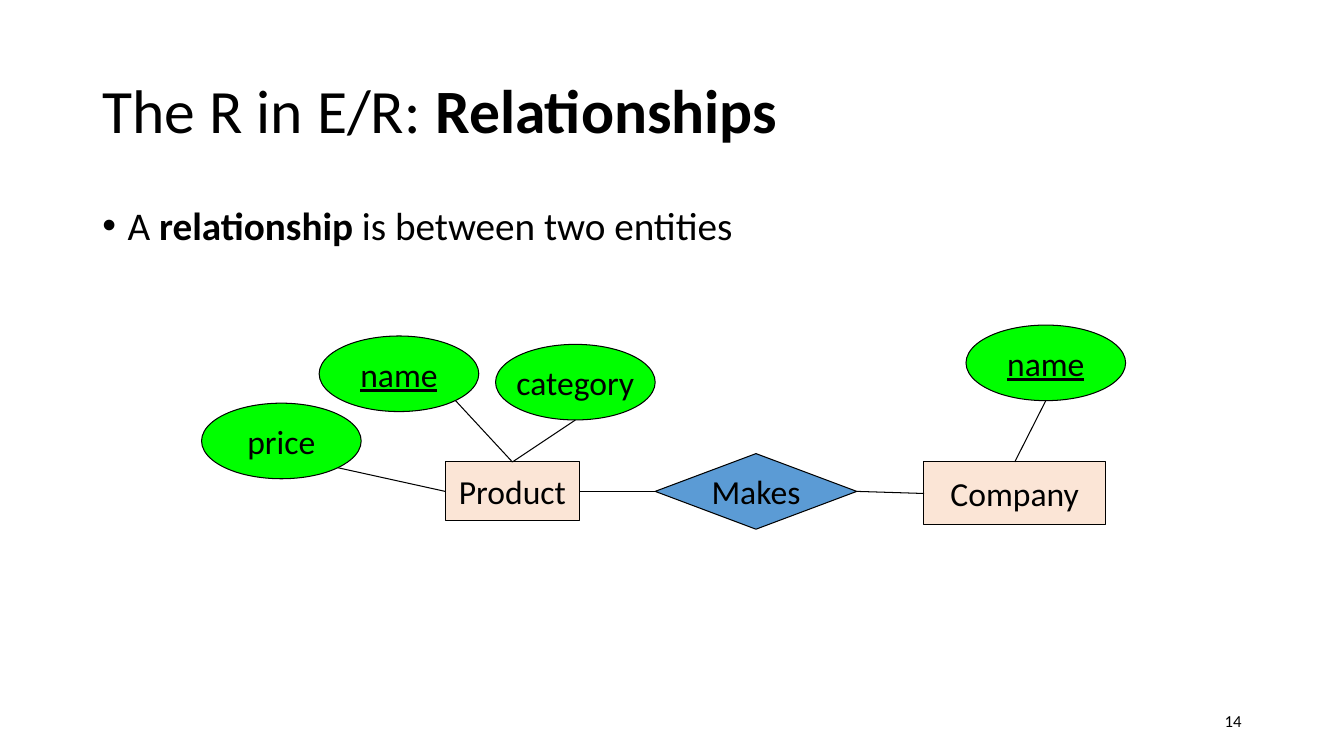
from dataclasses import dataclass

from lxml import etree
from pptx import Presentation
from pptx.dml.color import RGBColor
from pptx.enum.shapes import MSO_CONNECTOR, MSO_SHAPE
from pptx.enum.text import MSO_ANCHOR, PP_ALIGN
from pptx.oxml.ns import qn
from pptx.util import Inches, Pt

RECT, OVAL, DIAMOND = MSO_SHAPE.RECTANGLE, MSO_SHAPE.OVAL, MSO_SHAPE.DIAMOND
STRAIGHT = MSO_CONNECTOR.STRAIGHT
MIDDLE, TOP_ANCHOR = MSO_ANCHOR.MIDDLE, MSO_ANCHOR.TOP
LEFT_ALIGN, CENTER, RIGHT_ALIGN = PP_ALIGN.LEFT, PP_ALIGN.CENTER, PP_ALIGN.RIGHT

WIDTH, HEIGHT = Inches(13.333), Inches(7.5)
CELL = HEIGHT / 90  # the slide is a grid of 160 by 90 cells

# Points on a shape, as shares of its width and height
TOP, LEFT, RIGHT, BOTTOM = (0.5, 0), (0, 0.5), (1, 0.5), (0.5, 1)
CORNER = (0.854, 0.854)  # lower right of an oval
OVAL_SIZE = (19, 9)


@dataclass(frozen=True)
class Theme:
    font: str = "Calibri"
    ink: RGBColor = RGBColor(0, 0, 0)
    entity: RGBColor = RGBColor(0xFB, 0xE5, 0xD6)
    field: RGBColor = RGBColor(0, 0xFF, 0)
    link: RGBColor = RGBColor(0x5B, 0x9B, 0xD5)
    title: Pt = Pt(44)
    body: Pt = Pt(28)
    label: Pt = Pt(24)
    number: Pt = Pt(12)
    line: Pt = Pt(0.75)


THEME = Theme()


def cells(*counts):
    return [round(n * CELL) for n in counts]


def place(shape, box):
    shape.left, shape.top, shape.width, shape.height = cells(*box)


def write(frame, parts, size, align, anchor=MIDDLE):
    """Fill the frame with one paragraph of (text, bold) parts."""
    frame.vertical_anchor = anchor
    para = frame.paragraphs[0]
    para.alignment = align
    for text, bold in parts:
        run = para.add_run()
        run.text = text
        font = run.font
        font.name, font.size, font.bold = THEME.font, size, bold
        font.color.rgb = THEME.ink
    return para


def add_node(group, kind, box, text, fill, key=False):
    """Add a labelled shape; a key is underlined."""
    node = group.shapes.add_shape(kind, *cells(*box))
    node.shadow.inherit = False
    node.fill.solid()
    node.fill.fore_color.rgb = fill
    node.line.color.rgb = THEME.ink
    node.line.width = THEME.line
    node.text_frame.word_wrap = False
    para = write(node.text_frame, [(text, False)], THEME.label, CENTER)
    if key:
        para.runs[0].font.underline = True


def spot(box, site):
    x, y, w, h = box
    return cells(x + w * site[0], y + h * site[1])


def join(group, box, site, end_box, end_site):
    line = group.shapes.add_connector(
        STRAIGHT, *spot(box, site), *spot(end_box, end_site))
    line.line.color.rgb = THEME.ink
    line.line.width = THEME.line
    etree.SubElement(line._element.spPr, qn("a:effectLst"))


def add_title(slide, box):
    title = slide.shapes.title
    place(title, box)
    parts = [("The R in E/R: ", False), ("Relationships", True)]
    para = write(title.text_frame, parts, THEME.title, LEFT_ALIGN)
    para.line_spacing = 0.9


def add_body(slide, box):
    body = slide.placeholders[1]
    place(body, box)
    parts = [("A ", False), ("relationship", True),
             (" is between two entities", False)]
    para = write(body.text_frame, parts, THEME.body, LEFT_ALIGN, TOP_ANCHOR)
    para.line_spacing = 0.9
    para.space_before = Pt(10)
    props = para._p.get_or_add_pPr()
    props.set("marL", str(Inches(0.25)))
    props.set("indent", str(-Inches(0.25)))
    etree.SubElement(props, qn("a:buChar")).set("char", "•")


def add_number(slide, box):
    number = slide.shapes.add_textbox(*cells(*box))
    number.text_frame.word_wrap = True
    write(number.text_frame, [("14", False)], THEME.number, RIGHT_ALIGN)


def add_entity(slide, box, name, fields):
    """Add an entity with its fields, each offset from the box corner."""
    group = slide.shapes.add_group_shape()
    add_node(group, RECT, box, name, THEME.entity)
    for text, key, dx, dy, site, end in fields:
        oval = (box[0] + dx, box[1] + dy, *OVAL_SIZE)
        add_node(group, OVAL, oval, text, THEME.field, key)
        join(group, oval, site, box, end)


def add_link(slide, box, name, source, target):
    group = slide.shapes.add_group_shape()
    add_node(group, DIAMOND, box, name, THEME.link)
    join(group, source, RIGHT, box, LEFT)
    join(group, box, RIGHT, target, LEFT)


def add_diagram(slide, box):
    x, y = box
    product = (x + 29, y + 16.3, 16, 7)
    company = (x + 86, y + 16.3, 21.6, 7.5)
    add_entity(slide, product, "Product", [
        ("name", True, -15, -15, CORNER, TOP),
        ("category", False, 6, -14, BOTTOM, TOP),
        ("price", False, -29, -7, CORNER, LEFT),
    ])
    add_entity(slide, company, "Company", [
        ("name", True, 5, -16.3, BOTTOM, TOP),
    ])
    add_link(slide, (x + 54, y + 15.3, 24, 9), "Makes", product, company)


def main():
    deck = Presentation()
    deck.slide_width, deck.slide_height = WIDTH, HEIGHT
    slide = deck.slides.add_slide(deck.slide_layouts[1])
    add_title(slide, (11, 4.8, 138, 17.4))
    add_body(slide, (11, 24, 138, 57))
    add_number(slide, (113, 83.4, 36, 4.8))
    add_diagram(slide, (24, 38.7))
    deck.save("out.pptx")


if __name__ == "__main__":
    main()
